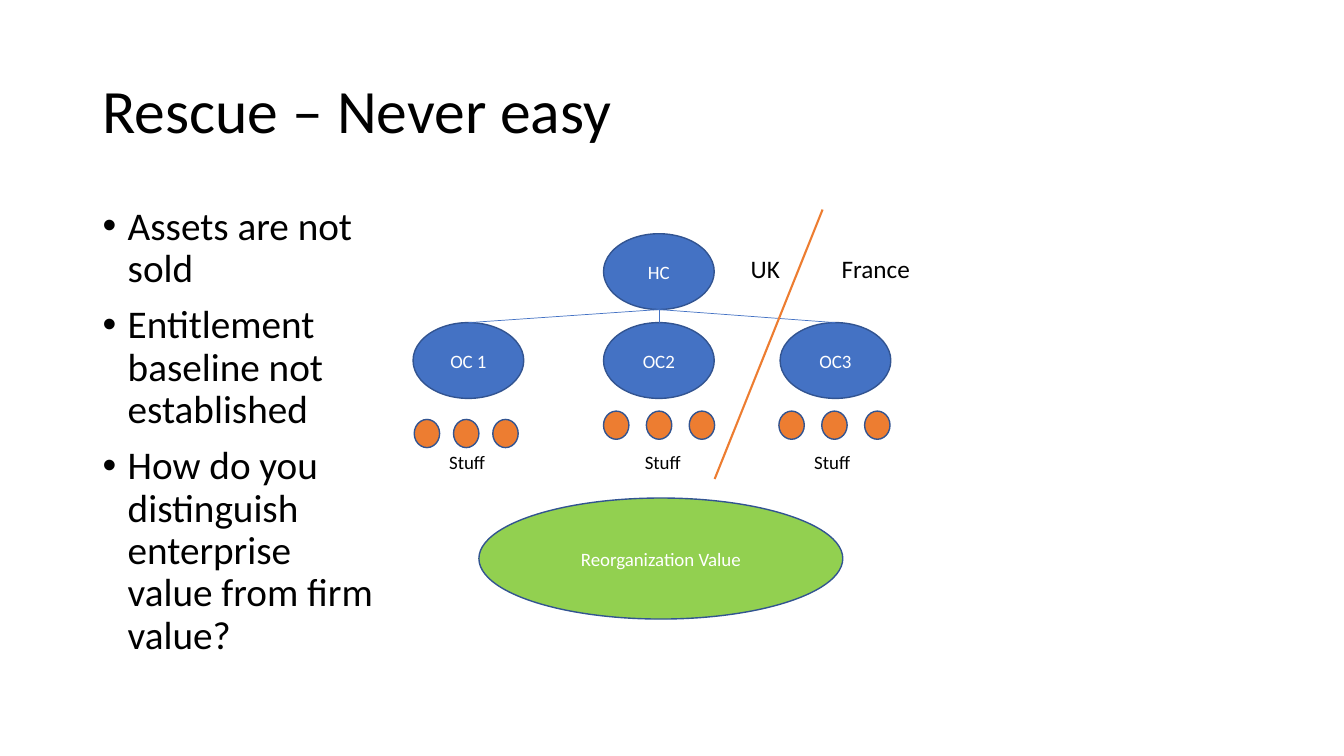
"""Build a slide on rescue of a holding company and its operating companies."""
from lxml.etree import SubElement
from pptx import Presentation
from pptx.dml.color import RGBColor
from pptx.enum.shapes import MSO_CONNECTOR as CONN, MSO_SHAPE as SHAPE
from pptx.enum.text import MSO_ANCHOR as ANCHOR, MSO_AUTO_SIZE as AUTO, PP_ALIGN as ALIGN
from pptx.oxml.ns import qn
from pptx.util import Cm, Pt

TITLE = "Rescue – Never easy"
BULLETS = [
    "Assets are not sold",
    "Entitlement baseline not established",
    "How do you distinguish enterprise value from firm value?",
]
FONT = "Calibri"
BLUE, NAVY, ORANGE, GREEN = "4472C4", "325491", "ED7D31", "92D050"
BLACK, WHITE = "000000", "FFFFFF"

NODE_W, NODE_H = 2.79, 1.91
HOLDING = ("HC", 15.21, 5.89)
OC_TOP = 8.13
COMPANIES = [
    {"name": "OC 1", "left": 10.41, "dots": (10.44, 10.57, 0.99), "stuff": 11.07},
    {"name": "OC2", "left": 15.21, "dots": (15.21, 10.36, 1.08), "stuff": 16.0},
    {"name": "OC3", "left": 19.66, "dots": (19.63, 10.36, 1.08), "stuff": 20.27},
]
DOT_W, DOT_H, DOT_COUNT = 0.64, 0.71, 3
STUFF_BOX = (11.23, 1.45, 0.84)
VALUE = ("Reorganization Value", 12.07, 12.55, 9.17, 3.05)
BORDER = (20.73, 5.28, 18.01, 12.07)
COUNTRIES = [("UK", 18.67, 1.24), ("France", 20.96, 2.26)]
COUNTRY_TOP, COUNTRY_H = 6.27, 1.02


def color(value):
    return RGBColor.from_string(value)


def style_text(tf, size, text_color, align):
    for p in tf.paragraphs:
        p.alignment = align
        for r in p.runs:
            r.font.name, r.font.size = FONT, Pt(size)
            r.font.color.rgb = color(text_color)


def place(sp, left, top, width, height):
    sp.left, sp.top, sp.width, sp.height = map(Cm, (left, top, width, height))


def add_oval(s, left, top, width, height, fill, text=""):
    sp = s.shapes.add_shape(SHAPE.OVAL, *map(Cm, (left, top, width, height)))
    sp.shadow.inherit = False
    sp.fill.solid()
    sp.fill.fore_color.rgb = color(fill)
    sp.line.color.rgb = color(NAVY)
    sp.line.width = Pt(1)
    if text:
        tf = sp.text_frame
        tf.text = text
        tf.vertical_anchor = ANCHOR.MIDDLE
        style_text(tf, 13.5, WHITE, ALIGN.CENTER)


def add_label(s, text, left, top, width, height, size):
    tf = s.shapes.add_textbox(*map(Cm, (left, top, width, height))).text_frame
    tf.text = text
    tf.word_wrap = False
    tf.auto_size = AUTO.SHAPE_TO_FIT_TEXT
    style_text(tf, size, BLACK, ALIGN.LEFT)


def add_line(s, x1, y1, x2, y2, line_color, width):
    line = s.shapes.add_connector(CONN.STRAIGHT, *map(Cm, (x1, y1, x2, y2)))
    line.line.color.rgb = color(line_color)
    line.line.width = Pt(width)
    SubElement(line._element.spPr, qn("a:effectLst"))


def add_title_and_list(s):
    title, body = s.shapes.title, s.placeholders[1]
    place(title, 2.33, 1.01, 29.21, 3.68)
    title.text_frame.text = TITLE
    title.text_frame.vertical_anchor = ANCHOR.MIDDLE
    title.text_frame.paragraphs[0].line_spacing = 0.9
    style_text(title.text_frame, 44, BLACK, ALIGN.LEFT)

    place(body, 2.33, 5.07, 7.6, 12.09)
    tf = body.text_frame
    tf.text = "\n".join(BULLETS)
    tf.auto_size = AUTO.NONE
    style_text(tf, 28, BLACK, ALIGN.LEFT)
    for p in tf.paragraphs:
        p.line_spacing, p.space_before = 0.9, Pt(10)
        pPr = p._p.get_or_add_pPr()
        pPr.set("marL", str(Cm(0.635)))
        pPr.set("indent", str(-Cm(0.635)))


def add_structure(s):
    name, hc_left, hc_top = HOLDING
    add_oval(s, hc_left, hc_top, NODE_W, NODE_H, BLUE, name)
    for company in COMPANIES:
        left = company["left"]
        add_oval(s, left, OC_TOP, NODE_W, NODE_H, BLUE, company["name"])
        add_line(s, hc_left + NODE_W / 2, hc_top + NODE_H,
                 left + NODE_W / 2, OC_TOP, BLUE, 0.5)
        dot_left, dot_top, step = company["dots"]
        for i in range(DOT_COUNT):
            add_oval(s, dot_left + i * step, dot_top, DOT_W, DOT_H, ORANGE)
        add_label(s, "Stuff", company["stuff"], *STUFF_BOX, 13.5)
    text, *box = VALUE
    add_oval(s, *box, GREEN, text)


def add_countries(s):
    add_line(s, *BORDER, ORANGE, 1.5)
    for name, left, width in COUNTRIES:
        add_label(s, name, left, COUNTRY_TOP, width, COUNTRY_H, 18)


def main():
    prs = Presentation()
    prs.slide_width, prs.slide_height = Cm(33.87), Cm(19.05)
    s = prs.slides.add_slide(prs.slide_layouts[1])
    add_title_and_list(s)
    add_structure(s)
    add_countries(s)
    prs.save("out.pptx")


if __name__ == "__main__":
    main()
